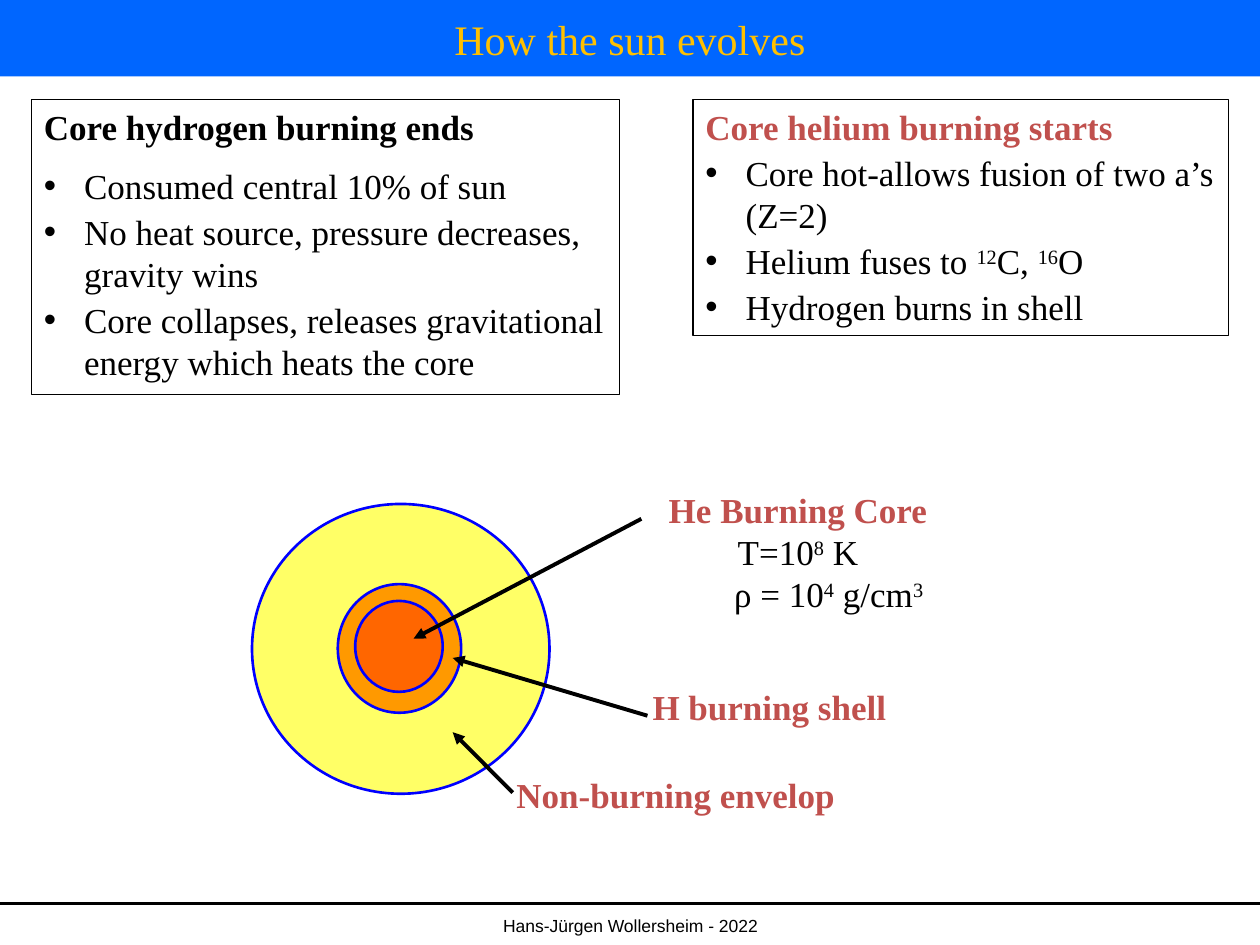
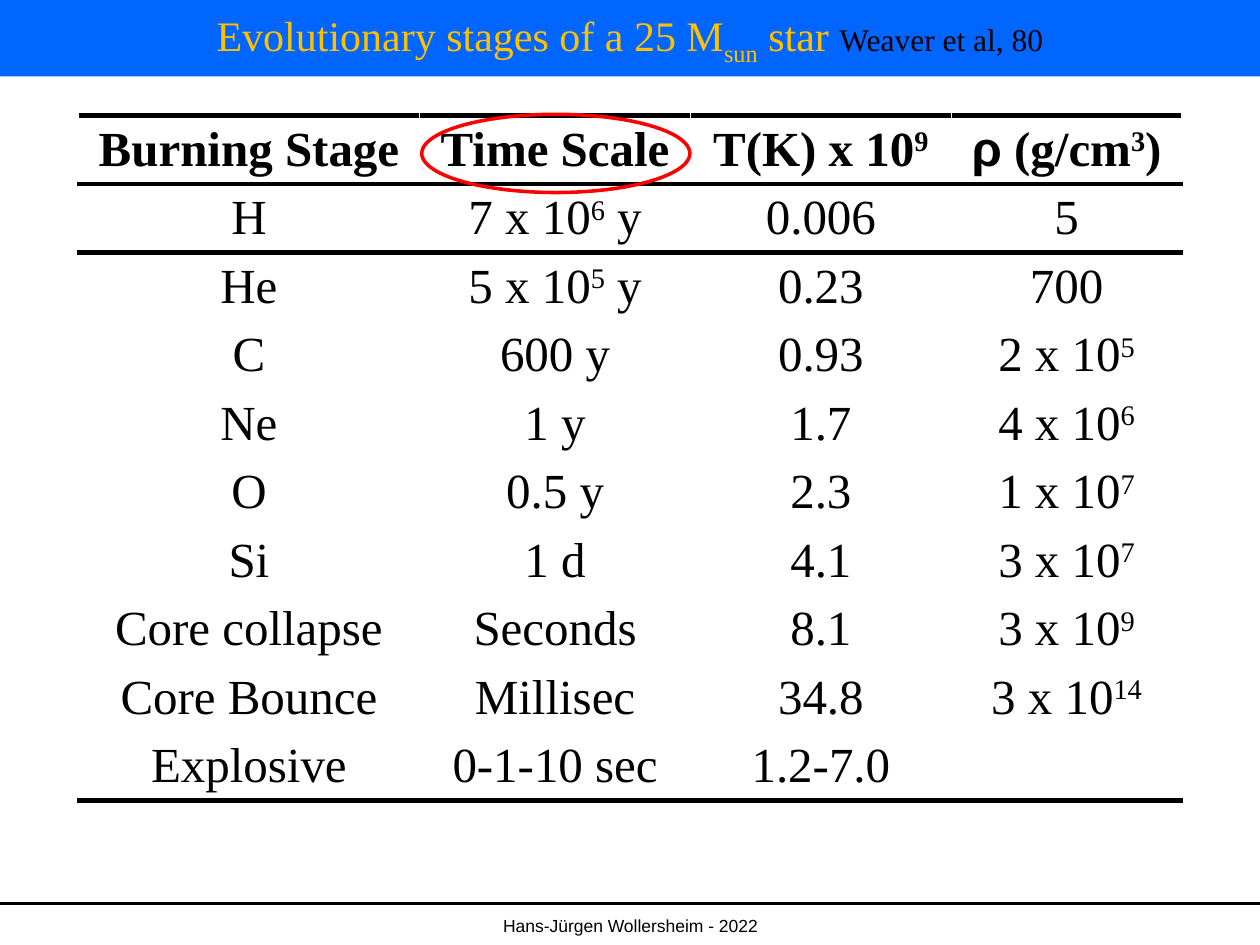
"""Builds two slides on stellar evolution: the sun's burning layers and a table of stages."""
import pptx
import pptx.dml.color
import pptx.enum.shapes
import pptx.enum.text
import pptx.oxml
import pptx.oxml.ns
import pptx.util

Pt = pptx.util.Pt
SHAPE = pptx.enum.shapes.MSO_SHAPE
ALIGN = pptx.enum.text.PP_ALIGN
ANCHOR = pptx.enum.text.MSO_ANCHOR
SERIF, SANS = "Times New Roman", "Arial"
BODY, LEADING, HANG = 20, 24, 23
COLORS = {
    "black": "000000", "band": "0066FF", "title": "FFC000", "accent": "C0504D",
    "envelope": "FFFF66", "shell": "FF9900", "core": "FF6600",
    "outline": "0000FF", "mark": "FF0000",
}
STAGES = [
    ("H", "7 x 10^6^ y", "0.006", "5"),
    ("He", "5 x 10^5^ y", "0.23", "700"),
    ("C", "600 y", "0.93", "2 x 10^5^"),
    ("Ne", "1 y", "1.7", "4 x 10^6^"),
    ("O", "0.5 y", "2.3", "1 x 10^7^"),
    ("Si", "1 d", "4.1", "3 x 10^7^"),
    ("Core collapse", "Seconds", "8.1", "3 x 10^9^"),
    ("Core Bounce", "Millisec", "34.8", "3 x 10^14^"),
    ("Explosive", "0-1-10 sec", "1.2-7.0", ""),
]


def rgb(name):
    """Return the named palette colour."""
    return pptx.dml.color.RGBColor.from_string(COLORS[name])


def add_xml(parent, xml, index=None):
    """Put a DrawingML element into parent, at index or at the end."""
    child = pptx.oxml.parse_xml(xml.replace(" ", f' {pptx.oxml.ns.nsdecls("a")} ', 1))
    parent.insert(len(parent) if index is None else index, child)


def write(p, text, size=BODY, color="black", bold=False, font=SERIF, shift=30):
    """Add text as runs; pieces between carets are raised by shift percent."""
    for i, piece in enumerate(text.split("^")):
        if piece:
            r = p.add_run()
            r.text = piece
            r.font.size, r.font.bold, r.font.name = Pt(size), bold, font
            r.font.color.rgb = rgb(color)
            if i % 2:
                r._r.get_or_add_rPr().set("baseline", str(shift * 1000))


def add_panel(s, kind, box, fill=None, line=None, width=1.5):
    """Add a preset shape without shadow and return it."""
    sp = s.shapes.add_shape(kind, *map(Pt, box))
    sp.shadow.inherit = False
    if fill:
        sp.fill.solid()
        sp.fill.fore_color.rgb = rgb(fill)
    else:
        sp.fill.background()
    if line:
        sp.line.color.rgb = rgb(line)
        sp.line.width = Pt(width)
    else:
        sp.line.fill.background()
    return sp


def add_line(s, start, end, width, arrow=False):
    """Add a black line, with an arrowhead at its end if wanted."""
    c = s.shapes.add_connector(pptx.enum.shapes.MSO_CONNECTOR.STRAIGHT, *map(Pt, start + end))
    c.line.color.rgb = rgb("black")
    c.line.width = Pt(width)
    if arrow:
        add_xml(c.line._get_or_add_ln(), '<a:tailEnd type="triangle"/>')
    add_xml(c._element.spPr, "<a:effectLst />")


def add_text(s, box):
    """Add a wrapping text box and return its frame."""
    tf = s.shapes.add_textbox(*map(Pt, box)).text_frame
    tf.word_wrap = True
    return tf


def add_label(s, box, text):
    """Add a bold accent label and return its text frame."""
    tf = add_text(s, box)
    p = tf.paragraphs[0]
    p.line_spacing = Pt(LEADING)
    write(p, text, color="accent", bold=True)
    return tf


def add_fact_box(s, box, heading, color, facts, first_gap):
    """Add a framed box with a bold heading over bulleted facts."""
    tf = add_panel(s, SHAPE.RECTANGLE, box, line="black", width=0.75).text_frame
    tf.word_wrap = True
    tf.vertical_anchor = ANCHOR.TOP
    for i, text in enumerate([heading] + facts):
        p = tf.add_paragraph() if i else tf.paragraphs[0]
        p.alignment = ALIGN.LEFT
        p.line_spacing = Pt(LEADING)
        pPr = p._p.get_or_add_pPr()
        pPr.set("marL", str(Pt(HANG)))
        pPr.set("indent", str(-Pt(HANG)))
        if i:
            p.space_before = Pt(first_gap if i == 1 else 2.3)
            add_xml(pPr, '<a:buFont typeface="Arial"/>')
            add_xml(pPr, '<a:buChar char="•"/>')
        write(p, text, color=color if i == 0 else "black", bold=i == 0)


def add_slide(prs, title):
    """Add a slide with footer and title band; return it and the title paragraph."""
    s = prs.slides.add_slide(prs.slide_layouts[6])
    add_line(s, (0, 516.2), (720, 516.2), 1.5)
    p = add_text(s, (0.5, 519.1, 719.5, 20.9)).paragraphs[0]
    p.alignment = ALIGN.CENTER
    write(p, "Hans-Jürgen Wollersheim - 2022", 10, font=SANS)
    tf = add_panel(s, SHAPE.RECTANGLE, (0, 0, 720, 43.7), fill="band").text_frame
    tf.word_wrap = True
    tf.vertical_anchor = ANCHOR.MIDDLE
    p = tf.paragraphs[0]
    p.alignment = ALIGN.CENTER
    write(p, title, 24, "title", shift=-25)
    return s, p


def add_star(s):
    """Draw the layered star with its arrows and labels."""
    for box, fill in [
        ((144, 288, 170, 165.6), "envelope"),
        ((193, 333.8, 70.5, 73.5), "shell"),
        ((203, 343.4, 50, 52), "core"),
    ]:
        add_panel(s, SHAPE.OVAL, box, fill, "outline")
    for start, end in [
        ((366.5, 296.5), (236.3, 365)),
        ((370, 409), (258.7, 376)),
        ((293, 453), (258.7, 418.4)),
    ]:
        add_line(s, start, end, 2.25, arrow=True)
    add_label(s, (365.8, 388, 210, 31), "H burning shell")
    add_label(s, (288, 438.5, 270, 31), "Non-burning envelop")
    tf = add_label(s, (366, 275.8, 180, 80), "He Burning Core")
    for text in ("T=10^8^ K", "ρ = 10^4^ g/cm^3^"):
        p = tf.add_paragraph()
        p.line_spacing = Pt(LEADING)
        write(p, text)
    p._p.get_or_add_pPr().set("marL", str(Pt(35)))
    for p in tf.paragraphs:
        p.alignment = ALIGN.CENTER


def set_cell(cell, parts, bold, edges):
    """Fill a cell with centred (text, font) parts and rule the given edges."""
    cell.fill.background()
    cell.vertical_anchor = ANCHOR.MIDDLE
    cell.margin_top = cell.margin_bottom = Pt(2)
    p = cell.text_frame.paragraphs[0]
    p.alignment = ALIGN.CENTER
    for text, font in parts:
        write(p, text, 28, bold=bold, font=font)
    for i, edge in enumerate(edges):
        add_xml(
            cell._tc.get_or_add_tcPr(),
            f'<a:ln{edge} w="{Pt(3)}"><a:solidFill><a:srgbClr val="{COLORS["black"]}"/>'
            f"</a:solidFill></a:ln{edge}>", i)


def add_stage_table(s):
    """Add the table of burning stages."""
    widths, row_height = (195.1, 154.8, 149, 131.8), 39.15
    header = [[("Burning Stage", SERIF)], [("Time Scale", SERIF)],
              [("T(K) x 10^9^", SERIF)], [("ρ", SANS), (" (g/cm^3^)", SERIF)]]
    rows = [header] + [[[(text, SERIF)] for text in stage] for stage in STAGES]
    edges = {0: "TB", 1: "T", len(STAGES): "B"}
    table = s.shapes.add_table(len(rows), len(widths), Pt(44.7), Pt(66), Pt(sum(widths)),
                               Pt(row_height * len(rows))).table
    table.first_row = table.horz_banding = False
    for column, width in zip(table.columns, widths):
        column.width = Pt(width)
    for i, row in enumerate(rows):
        table.rows[i].height = Pt(row_height)
        for j, parts in enumerate(row):
            set_cell(table.cell(i, j), parts, i == 0, edges.get(i, ""))


def main():
    """Build both slides and save the deck."""
    prs = pptx.Presentation()
    prs.slide_width, prs.slide_height = Pt(720), Pt(540)

    s, p = add_slide(prs, "How the sun evolves")
    add_fact_box(s, (18, 56.9, 336.2, 168.5), "Core hydrogen burning ends", "black", [
        "Consumed central 10% of sun",
        "No heat source, pressure decreases, gravity wins",
        "Core collapses, releases gravitational energy which heats the core",
    ], 9.5)
    add_fact_box(s, (396, 56.9, 306, 135), "Core helium burning starts", "accent", [
        "Core hot-allows fusion of two a’s (Z=2)",
        "Helium fuses to ^12^C, ^16^O",
        "Hydrogen burns in shell",
    ], 2.3)
    add_star(s)

    s, p = add_slide(prs, "Evolutionary stages of a 25 M^sun^ star ")
    write(p, "Weaver et al, 80", 18)
    add_stage_table(s)
    add_panel(s, SHAPE.OVAL, (241, 65.3, 153.2, 44.7), line="mark", width=2)

    prs.save("out.pptx")


if __name__ == "__main__":
    main()
